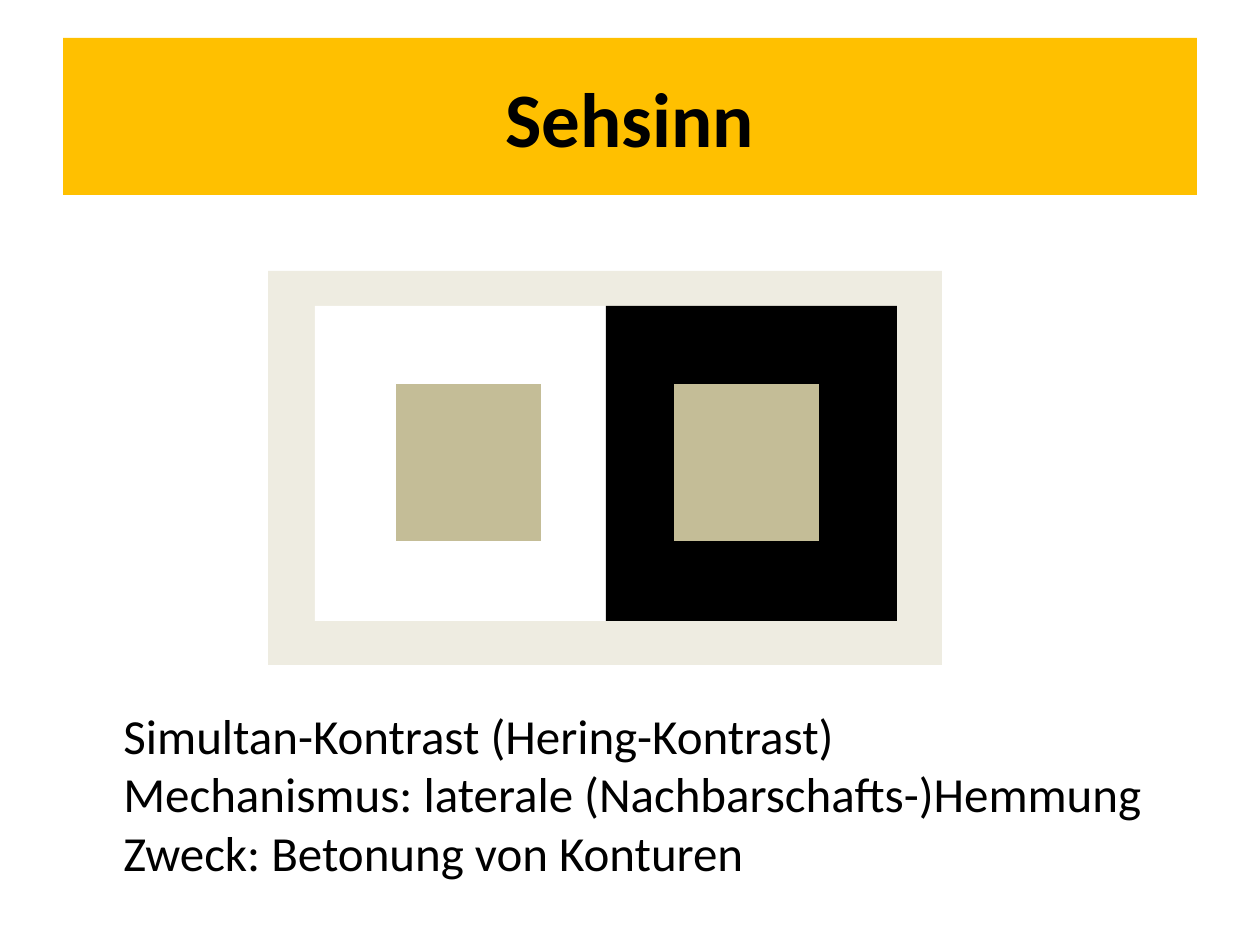
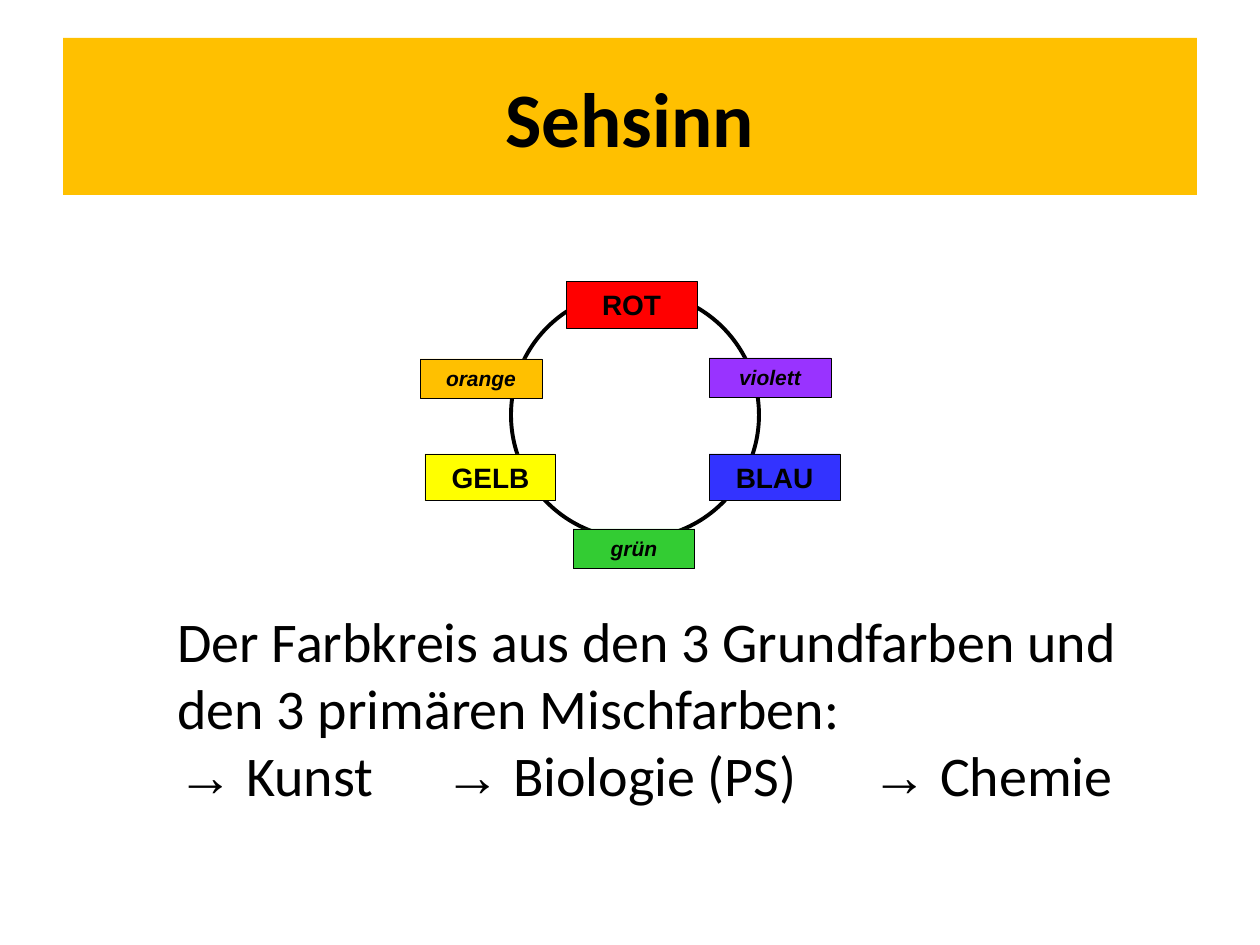
from dataclasses import dataclass

from lxml.etree import SubElement
from pptx import Presentation
from pptx.dml.color import RGBColor
from pptx.enum.shapes import MSO_SHAPE
from pptx.enum.text import MSO_ANCHOR, PP_ALIGN
from pptx.oxml.ns import qn
from pptx.util import Pt

EMU_PER_PX = 914400 / 126
TITLE_ONLY = 5


@dataclass(frozen=True)
class Theme:
    band: str = "FFC000"
    black: str = "000000"
    white: str = "FFFFFF"
    frame: str = "EEECE1"
    patch: str = "C4BD97"
    red: str = "FF0000"
    blue: str = "3333FF"
    yellow: str = "FFFF00"
    orange: str = "FFC000"
    violet: str = "9933FF"
    green: str = "33CC33"
    body_font: str = "Calibri"
    label_font: str = "Arial"
    title_size: int = 44
    contrast_size: int = 28
    wheel_size: int = 32
    primary_size: int = 16
    mixed_size: int = 12


THEME = Theme()


def px(length):
    return round(length * EMU_PER_PX)


def box(*lengths):
    return [px(length) for length in lengths]


def style_run(run, font, size, bold=False, italic=False):
    run.font.name = font
    run.font.size = Pt(size)
    run.font.bold = bold
    run.font.italic = italic
    run.font.color.rgb = RGBColor.from_string(THEME.black)


def add_titled_slide(prs, heading):
    slide = prs.slides.add_slide(prs.slide_layouts[TITLE_ONLY])
    title = slide.shapes.title
    title.left, title.top, title.width, title.height = box(63, 38, 1134, 157)
    title.fill.solid()
    title.fill.fore_color.rgb = RGBColor.from_string(THEME.band)
    title.text_frame.text = heading
    title.text_frame.vertical_anchor = MSO_ANCHOR.MIDDLE
    paragraph = title.text_frame.paragraphs[0]
    paragraph.alignment = PP_ALIGN.CENTER
    style_run(paragraph.runs[0], THEME.body_font, THEME.title_size, bold=True)
    return slide


def add_figure(parent, kind, bounds, fill=None, line_width=None):
    """Add a preset shape; without a fill or line width that part stays empty."""
    figure = parent.shapes.add_shape(kind, *box(*bounds))
    figure.shadow.inherit = False
    if fill:
        figure.fill.solid()
        figure.fill.fore_color.rgb = RGBColor.from_string(fill)
    else:
        figure.fill.background()
    if line_width:
        figure.line.color.rgb = RGBColor.from_string(THEME.black)
        figure.line.width = Pt(line_width)
    else:
        figure.line.fill.background()
    return figure


def add_colour_label(parent, name, left, top, fill, mixed):
    width, height = (122, 40) if mixed else (131, 47)
    label = add_figure(parent, MSO_SHAPE.RECTANGLE, (left, top, width, height), fill, 0.5)
    label.text_frame.text = name
    label.text_frame.vertical_anchor = MSO_ANCHOR.TOP
    paragraph = label.text_frame.paragraphs[0]
    paragraph.alignment = PP_ALIGN.CENTER
    size = THEME.mixed_size if mixed else THEME.primary_size
    style_run(paragraph.runs[0], THEME.label_font, size, bold=True, italic=mixed)


def add_body(slide, bounds, lines, size):
    frame = slide.shapes.add_textbox(*box(*bounds)).text_frame
    frame.word_wrap = True
    frame.text = "\n".join(lines)
    for paragraph in frame.paragraphs:
        for run in paragraph.runs:
            style_run(run, THEME.body_font, size)
    return frame


def add_subject_line(frame, subjects, stops, size):
    """Add one line of subjects, each behind an arrow and set apart by tab stops."""
    paragraph = frame.add_paragraph()
    tabs = SubElement(paragraph._p.get_or_add_pPr(), qn("a:tabLst"))
    for stop in stops:
        SubElement(tabs, qn("a:tab"), pos=str(px(stop)), algn="l")
    for index, subject in enumerate(subjects):
        arrow = "\t→" if index else "→"
        for text, font in ((arrow, THEME.label_font), (f" {subject}", THEME.body_font)):
            run = paragraph.add_run()
            run.text = text
            style_run(run, font, size)


def add_contrast_demo(slide):
    demo = slide.shapes.add_group_shape()
    panel_left, panel_width = 315, 291
    surfaces = [
        ((268, 271, 674, 394), THEME.frame),
        ((panel_left, 306, panel_width, 315), THEME.white),
        ((panel_left + panel_width, 306, panel_width, 315), THEME.black),
        ((396, 384, 145, 157), THEME.patch),
        ((674, 384, 145, 157), THEME.patch),
    ]
    for bounds, fill in surfaces:
        add_figure(demo, MSO_SHAPE.RECTANGLE, bounds, fill)


def add_colour_wheel(slide):
    wheel = slide.shapes.add_group_shape()
    add_figure(wheel, MSO_SHAPE.OVAL, (511, 291, 248, 248), line_width=2.25)
    colours = [
        ("ROT", 566, 281, THEME.red, False),
        ("BLAU", 709, 454, THEME.blue, False),
        ("GELB", 425, 454, THEME.yellow, False),
        ("orange", 420, 359, THEME.orange, True),
        ("violett", 709, 358, THEME.violet, True),
        ("grün", 573, 529, THEME.green, True),
    ]
    for colour in colours:
        add_colour_label(wheel, *colour)


def main():
    prs = Presentation()
    prs.slide_width, prs.slide_height = box(1260, 945)

    contrast = add_titled_slide(prs, "Sehsinn")
    add_contrast_demo(contrast)
    add_body(contrast, (111, 699, 1063, 190), [
        "Simultan-Kontrast (Hering-Kontrast)",
        "Mechanismus: laterale (Nachbarschafts-)Hemmung",
        "Zweck: Betonung von Konturen",
    ], THEME.contrast_size)

    colour_wheel = add_titled_slide(prs, "Sehsinn")
    add_colour_wheel(colour_wheel)
    explanation = add_body(colour_wheel, (165, 600, 975, 217), [
        "Der Farbkreis aus den 3 Grundfarben und den 3 primären Mischfarben:",
    ], THEME.wheel_size)
    add_subject_line(explanation, ["Kunst", "Biologie (PS)", "Chemie"],
                     (267, 694), THEME.wheel_size)

    prs.save("out.pptx")


if __name__ == "__main__":
    main()
